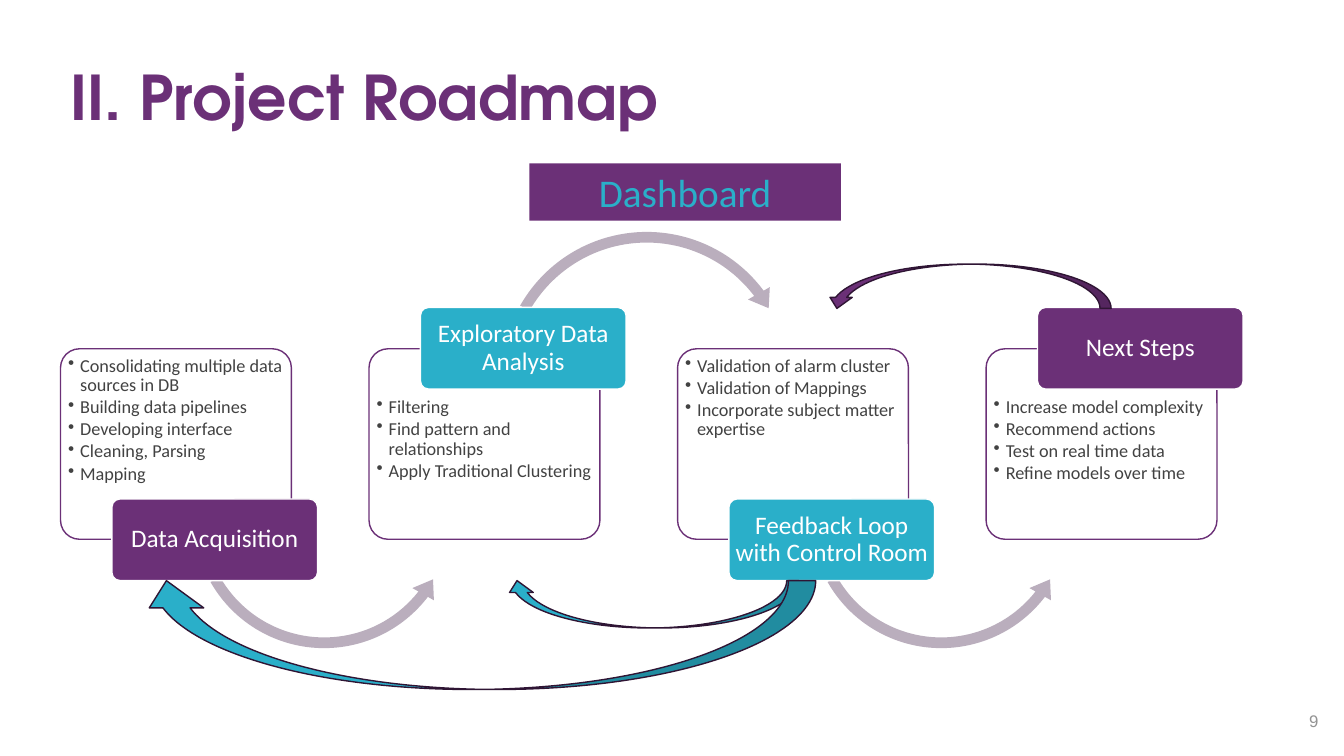
from lxml.etree import SubElement
from pptx import Presentation
from pptx.dml.color import RGBColor
from pptx.enum.shapes import MSO_SHAPE as SHAPE
from pptx.enum.text import MSO_ANCHOR as ANCHOR, PP_ALIGN as ALIGN
from pptx.oxml.ns import qn
from pptx.util import Inches, Pt

COLORS = {
    "purple": "6B3077", "teal": "2AAFC9", "mauve": "BAAEBD", "outline": "2F1534",
    "white": "FFFFFF", "text": "424242", "gray": "939393",
}


def draw(kind, bounds, fill, line=None, rotation=0, adjustments=()):
    shape = page.shapes.add_shape(kind, *[Inches(length) for length in bounds])
    shape.shadow.inherit = False
    shape.rotation = rotation
    for index, value in enumerate(adjustments):
        shape.adjustments[index] = value
    shape.fill.solid()
    shape.fill.fore_color.rgb = RGBColor.from_string(COLORS[fill])
    if line:
        shape.line.color.rgb = RGBColor.from_string(COLORS[line])
        shape.line.width = Pt(1)
    else:
        shape.line.fill.background()
    return shape


def write(box, text, size, color, font="Calibri", bold=False, align=ALIGN.CENTER,
          anchor=ANCHOR.MIDDLE, margins=(0.1, 0.05, 0.1, 0.05), spacing=1.0,
          after=0, bullet=False):
    frame = box.text_frame
    frame.word_wrap = True
    frame.vertical_anchor = anchor
    (frame.margin_left, frame.margin_top,
     frame.margin_right, frame.margin_bottom) = [Inches(margin) for margin in margins]
    for index, words in enumerate(text.split("\n")):
        para = frame.add_paragraph() if index else frame.paragraphs[0]
        para.alignment = align
        para.line_spacing = spacing
        para.space_after = Pt(after)
        if bullet:
            properties = para._p.get_or_add_pPr()
            properties.set("marL", str(Inches(0.12)))
            properties.set("indent", str(-Inches(0.12)))
            SubElement(properties, qn("a:buChar")).set("char", "•")
        span = para.add_run()
        span.text = words
        span.font.name = font
        span.font.size = Pt(size)
        span.font.bold = bold
        span.font.color.rgb = RGBColor.from_string(COLORS[color])


deck = Presentation()
deck.slide_width, deck.slide_height = Inches(13.33), Inches(7.5)
page = deck.slides.add_slide(deck.slide_layouts[6])

title = page.shapes.add_textbox(Inches(0.6), Inches(0.62), Inches(10.81), Inches(1.33))
write(title, "II. Project Roadmap", 44, "purple", font="TeX Gyre Adventor", bold=True,
      align=ALIGN.LEFT, anchor=ANCHOR.TOP, spacing=0.9)

stages = [
    ("Data Acquisition", "purple",
     "Consolidating multiple data sources in DB\nBuilding data pipelines\n"
     "Developing interface\nCleaning, Parsing\nMapping"),
    ("Exploratory Data Analysis", "teal",
     "Filtering\nFind pattern and relationships\nApply Traditional Clustering"),
    ("Feedback Loop with Control Room", "teal",
     "Validation of alarm cluster\nValidation of Mappings\n"
     "Incorporate subject matter expertise"),
    ("Next Steps", "purple",
     "Increase model complexity\nRecommend actions\nTest on real time data\n"
     "Refine models over time"),
]
for number, (name, color, tasks) in enumerate(stages):
    left = 0.6 + 3.06 * number
    tag_on_top = number % 2 == 1
    panel = draw(SHAPE.ROUNDED_RECTANGLE, (left, 3.46, 2.29, 1.89), "white", "purple",
                 adjustments=[0.1])
    write(panel, tasks, 13, "text", align=ALIGN.LEFT, anchor=ANCHOR.TOP,
          margins=(0.02, 0.43 if tag_on_top else 0.02, 0.02, 0.02),
          spacing=0.9, after=1.7, bullet=True)
    if number < len(stages) - 1:
        if tag_on_top:
            draw(SHAPE.CIRCULAR_ARROW, (left + 1.24, 2.23, 3.03, 3.03), "mauve",
                 adjustments=[0.035, 4.365, 193.88, 125.755, 0.041])
        else:
            draw(SHAPE.LEFT_CIRCULAR_ARROW, (left + 1.25, 3.77, 2.73, 2.73), "mauve",
                 adjustments=[0.039, 4.877, 22.632, 90.245, 0.045])
    tag = draw(SHAPE.ROUNDED_RECTANGLE,
               (left + 0.51, 3.05 if tag_on_top else 4.95, 2.04, 0.81), color, "white",
               adjustments=[0.1])
    write(tag, name, 18, "white", margins=(0.03, 0.03, 0.03, 0.03), spacing=0.9)

feedback_arrows = [
    (SHAPE.CURVED_DOWN_ARROW, (5.01, 5.76, 2.91, 0.47), "teal"),
    (SHAPE.CURVED_DOWN_ARROW, (1.38, 5.76, 6.71, 1.08), "teal"),
    (SHAPE.CURVED_UP_ARROW, (8.19, 2.62, 2.83, 0.44), "purple"),
]
for kind, bounds, color in feedback_arrows:
    draw(kind, bounds, color, "outline", rotation=180)

dashboard = draw(SHAPE.RECTANGLE, (5.25, 1.62, 3.09, 0.57), "purple")
write(dashboard, "Dashboard", 28, "teal")

page_number = page.shapes.add_textbox(Inches(12.73), Inches(6.95), Inches(0.6), Inches(0.4))
write(page_number, "9", 12, "gray", font="Arial")

deck.save("out.pptx")
